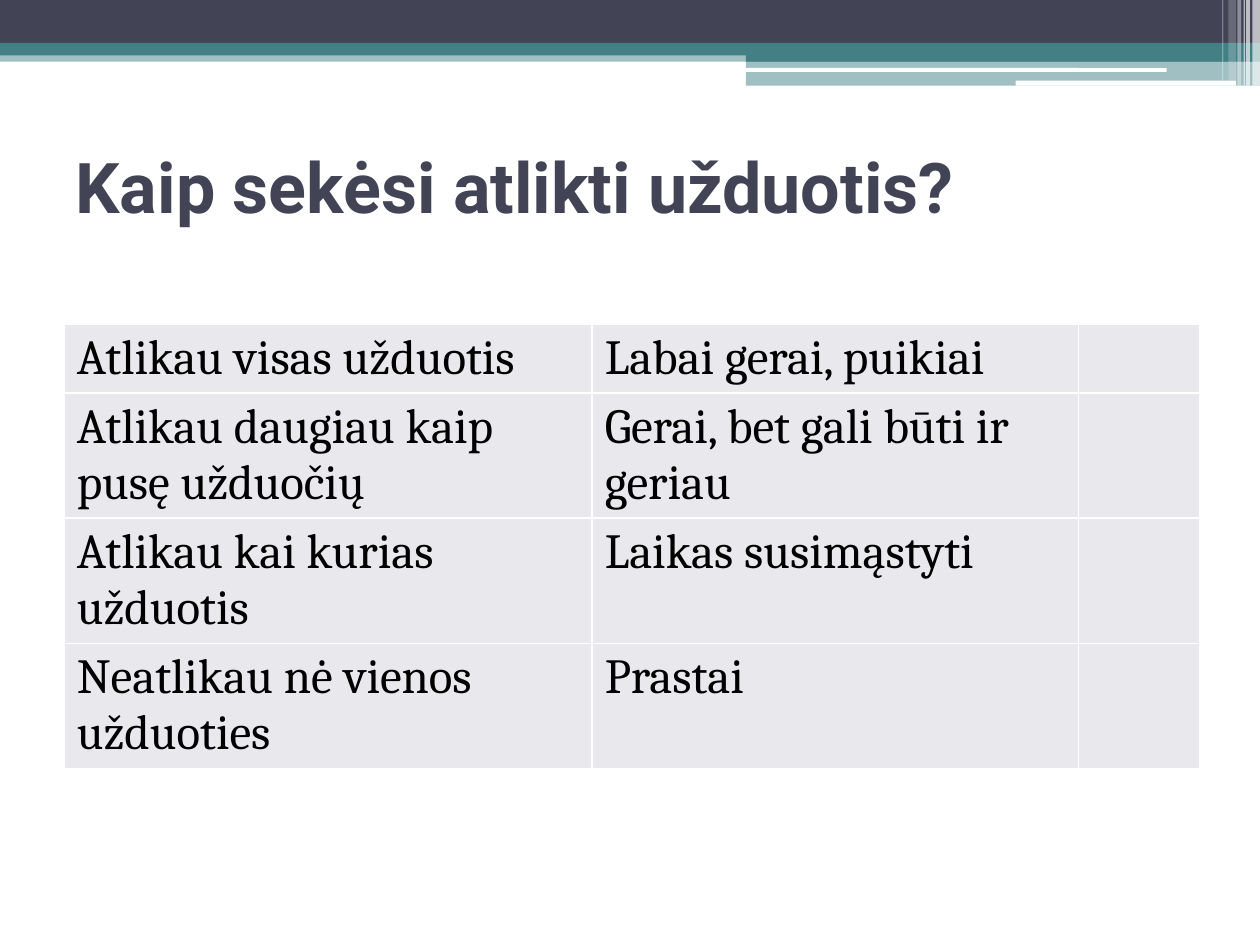
"""Build the self-assessment slide with a banded header and a table."""
from dataclasses import dataclass

from lxml.etree import SubElement
from pptx import Presentation
from pptx.dml.color import RGBColor
from pptx.enum.shapes import MSO_SHAPE as Shape
from pptx.enum.text import MSO_ANCHOR as Anchor, PP_ALIGN as Align
from pptx.oxml.ns import qn
from pptx.util import Inches, Pt


@dataclass(frozen=True)
class Theme:
    navy: str = "424456"
    teal: str = "438086"
    white: str = "FFFFFF"
    black: str = "000000"
    cell: str = "E9E9ED"
    title_font: str = "Roboto"
    body_font: str = "Cambria"
    title_size: int = 40
    body_size: int = 28
    border_width: int = 1


THEME = Theme()
TITLE = "Kaip sekėsi atlikti užduotis?"
ANSWERS = [
    ("Atlikau visas užduotis", "Labai gerai, puikiai", ""),
    ("Atlikau daugiau kaip pusę užduočių", "Gerai, bet gali būti ir geriau", ""),
    ("Atlikau kai kurias užduotis", "Laikas susimąstyti", ""),
    ("Neatlikau nė vienos užduoties", "Prastai", ""),
]
COLUMN_WIDTHS = (4.19, 3.86, 0.96)
ROW_HEIGHT = 0.41
BANDS = [
    ((0, 0.4, 10, 0.09), THEME.teal, 50),
    ((0, 0, 10, 0.34), THEME.navy, 100),
    ((0, 0.34, 10, 0.1), THEME.teal, 100),
    ((5.92, 0.39, 4.08, 0.1), THEME.teal, 100),
    ((5.92, 0.48, 4.08, 0.2), THEME.teal, 50),
]
HIGHLIGHTS = [(5.91, 0.54, 3.35, 0.03), (8.06, 0.64, 1.75, 0.04)]
STRIPES = [
    (9.94, 0.06, 0.68, 65),
    (9.89, 0.03, 0.68, 65),
    (9.87, 0.01, 0.68, 60),
    (9.82, 0.03, 0.68, 40),
    (9.75, 0.06, 0.64, 20),
    (9.7, 0.01, 0.64, 30),
]


def add_block(slide, box, color, opacity=100, kind=Shape.RECTANGLE):
    block = slide.shapes.add_shape(kind, *map(Inches, box))
    block.shadow.inherit = False
    block.line.fill.background()
    block.fill.solid()
    block.fill.fore_color.rgb = RGBColor.from_string(color)
    if opacity < 100:
        color_xml = block.fill._xPr.find(qn("a:solidFill"))[0]
        SubElement(color_xml, qn("a:alpha"), val=str(opacity * 1000))


def style_text(frame, font_name, size, color, bold=False):
    for paragraph in frame.paragraphs:
        paragraph.alignment = Align.LEFT
        for run in paragraph.runs:
            run.font.name = font_name
            run.font.size = Pt(size)
            run.font.bold = bold
            run.font.color.rgb = RGBColor.from_string(color)


def set_borders(cell):
    properties = cell._tc.get_or_add_tcPr()
    for position, side in enumerate(("lnL", "lnR", "lnT", "lnB")):
        border = SubElement(properties, qn(f"a:{side}"), w=str(Pt(THEME.border_width)))
        fill = SubElement(border, qn("a:solidFill"))
        SubElement(fill, qn("a:srgbClr"), val=THEME.white)
        properties.insert(position, border)


def add_header(slide):
    for box, color, opacity in BANDS:
        add_block(slide, box, color, opacity)
    for box in HIGHLIGHTS:
        add_block(slide, box, THEME.white, kind=Shape.ROUNDED_RECTANGLE)
    for left, width, height, opacity in STRIPES:
        add_block(slide, (left, 0, width, height), THEME.white, opacity)


def add_title(slide):
    title = slide.shapes.title
    title.left, title.top, title.width, title.height = map(Inches, (0.5, 0.84, 9, 1.26))
    title.text_frame.text = TITLE
    title.text_frame.vertical_anchor = Anchor.MIDDLE
    style_text(title.text_frame, THEME.title_font, THEME.title_size, THEME.navy, bold=True)


def add_answers(slide):
    size = (sum(COLUMN_WIDTHS), ROW_HEIGHT * len(ANSWERS))
    table = slide.shapes.add_table(
        len(ANSWERS), len(COLUMN_WIDTHS), *map(Inches, (0.51, 2.57, *size))
    ).table
    table.first_row = table.horz_banding = False
    for column, width in zip(table.columns, COLUMN_WIDTHS):
        column.width = Inches(width)
    for row, answer in zip(table.rows, ANSWERS):
        row.height = Inches(ROW_HEIGHT)
        for cell, wording in zip(row.cells, answer):
            cell.fill.solid()
            cell.fill.fore_color.rgb = RGBColor.from_string(THEME.cell)
            set_borders(cell)
            if wording:
                cell.text_frame.text = wording
                style_text(cell.text_frame, THEME.body_font, THEME.body_size, THEME.black)


def main():
    deck = Presentation()
    deck.slide_width, deck.slide_height = Inches(10), Inches(7.5)
    slide = deck.slides.add_slide(deck.slide_layouts[5])
    add_header(slide)
    add_title(slide)
    add_answers(slide)
    deck.save("out.pptx")


if __name__ == "__main__":
    main()
